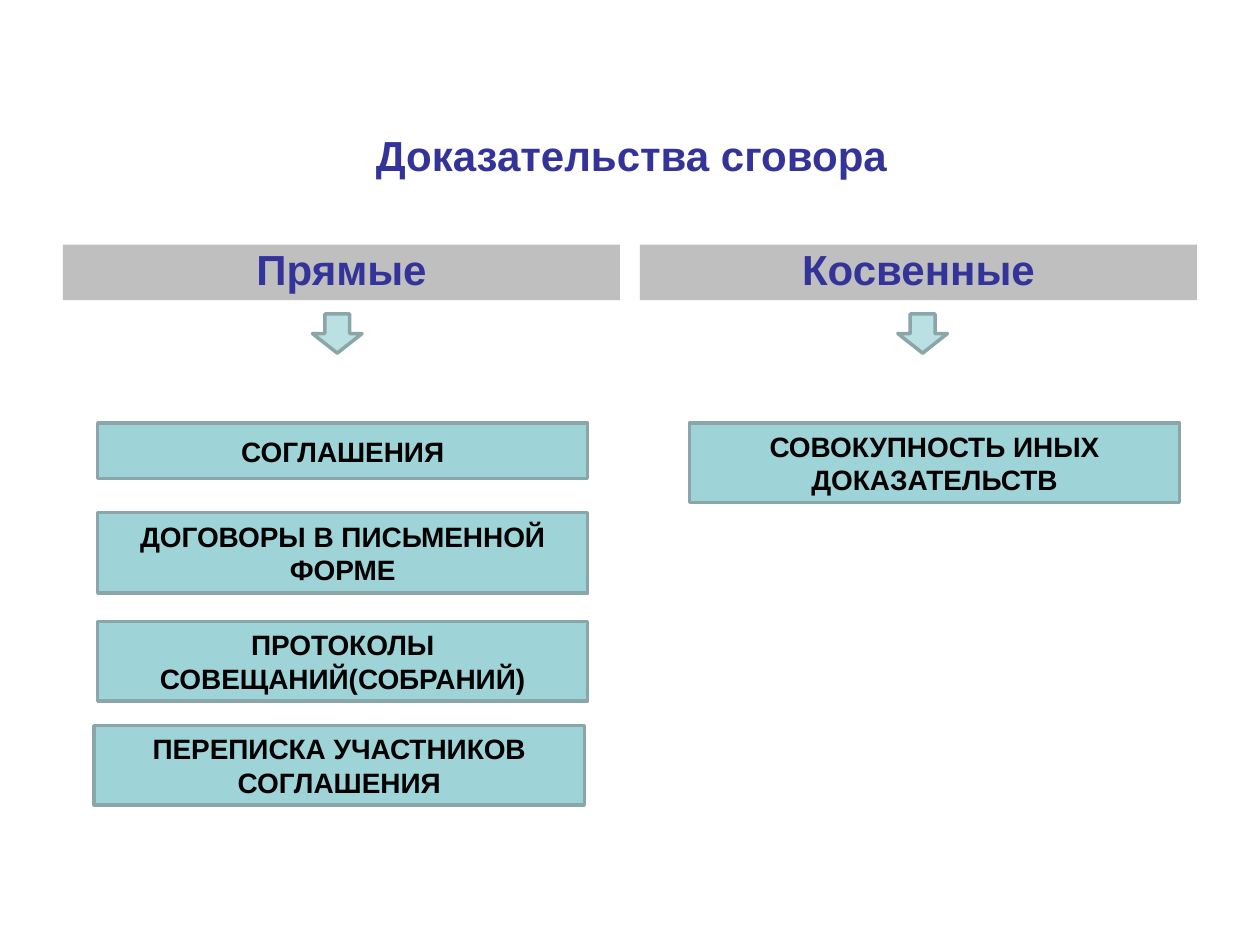
from dataclasses import dataclass

from pptx import Presentation
from pptx.dml.color import RGBColor
from pptx.enum.shapes import MSO_SHAPE
from pptx.enum.text import MSO_ANCHOR, PP_ALIGN
from pptx.util import Cm, Pt


@dataclass(frozen=True)
class Theme:
    font: str = "Arial"
    heading: RGBColor = RGBColor(0x33, 0x33, 0x99)
    card_text: RGBColor = RGBColor(0x00, 0x00, 0x00)
    header_fill: RGBColor = RGBColor(0xBF, 0xBF, 0xBF)
    card_fill: RGBColor = RGBColor(0x9E, 0xD3, 0xD7)
    arrow_fill: RGBColor = RGBColor(0xBB, 0xE0, 0xE3)
    outline: RGBColor = RGBColor(0x8A, 0xA6, 0xA8)
    heading_size: Pt = Pt(24)
    card_size: Pt = Pt(16)
    outline_width: Pt = Pt(2)


@dataclass(frozen=True)
class Box:
    """A rectangle in centimetres."""
    left: float
    top: float
    width: float
    height: float

    def inner(self, left, top, width, height):
        return Box(self.left + left, self.top + top, width, height)

    def lengths(self):
        return [Cm(value) for value in (self.left, self.top, self.width, self.height)]


@dataclass(frozen=True)
class Card:
    """A card's text and its place relative to the column."""
    text: str
    left: float
    top: float
    height: float


THEME = Theme()
CARD_WIDTH = 9.88


def write_text(shape, text, size, color, anchor=MSO_ANCHOR.MIDDLE):
    frame = shape.text_frame
    frame.word_wrap = True
    frame.vertical_anchor = anchor
    frame.text = text
    paragraph = frame.paragraphs[0]
    paragraph.alignment = PP_ALIGN.CENTER
    font = paragraph.font
    font.name, font.size, font.bold = THEME.font, size, True
    font.color.rgb = color


def add_filled_shape(slide, kind, box, fill, outlined=True):
    shape = slide.shapes.add_shape(kind, *box.lengths())
    shape.shadow.inherit = False
    shape.fill.solid()
    shape.fill.fore_color.rgb = fill
    if outlined:
        shape.line.color.rgb = THEME.outline
        shape.line.width = THEME.outline_width
    else:
        shape.line.fill.background()
    return shape


def place_title(slide, box, text):
    title = slide.shapes.title
    title.left, title.top, title.width, title.height = box.lengths()
    write_text(title, text, THEME.heading_size, THEME.heading)


def add_evidence_column(slide, box, heading, arrow_left, cards):
    """Draw a header bar, the arrow below it and the cards."""
    header = add_filled_shape(slide, MSO_SHAPE.RECTANGLE, box.inner(0, 0, box.width, 1.12),
                              THEME.header_fill, outlined=False)
    write_text(header, heading, THEME.heading_size, THEME.heading, MSO_ANCHOR.BOTTOM)
    add_filled_shape(slide, MSO_SHAPE.DOWN_ARROW, box.inner(arrow_left, 1.4, 1, 0.79),
                     THEME.arrow_fill)
    for card in cards:
        shape = add_filled_shape(slide, MSO_SHAPE.RECTANGLE,
                                 box.inner(card.left, card.top, CARD_WIDTH, card.height),
                                 THEME.card_fill)
        write_text(shape, card.text, THEME.card_size, THEME.card_text)


def main():
    presentation = Presentation()
    presentation.slide_width, presentation.slide_height = Cm(25.4), Cm(19.05)
    slide = presentation.slides.add_slide(presentation.slide_layouts[5])
    place_title(slide, Box(1.3, 1.52, 22.86, 3.18), "Доказательства сговора")
    add_evidence_column(slide, Box(1.27, 4.93, 11.23, 11.3), "Прямые", 5.03, [
        Card("СОГЛАШЕНИЯ", 0.7, 3.6, 1.12),
        Card("ДОГОВОРЫ В ПИСЬМЕННОЙ ФОРМЕ", 0.7, 5.4, 1.63),
        Card("ПРОТОКОЛЫ СОВЕЩАНИЙ(СОБРАНИЙ)", 0.7, 7.6, 1.6),
        Card("ПЕРЕПИСКА УЧАСТНИКОВ СОГЛАШЕНИЯ", 0.63, 9.7, 1.6),
    ])
    add_evidence_column(slide, Box(12.9, 4.93, 11.23, 11.3), "Косвенные", 5.2, [
        Card("СОВОКУПНОСТЬ ИНЫХ ДОКАЗАТЕЛЬСТВ", 1, 3.6, 1.6),
    ])
    presentation.save("out.pptx")


if __name__ == "__main__":
    main()
